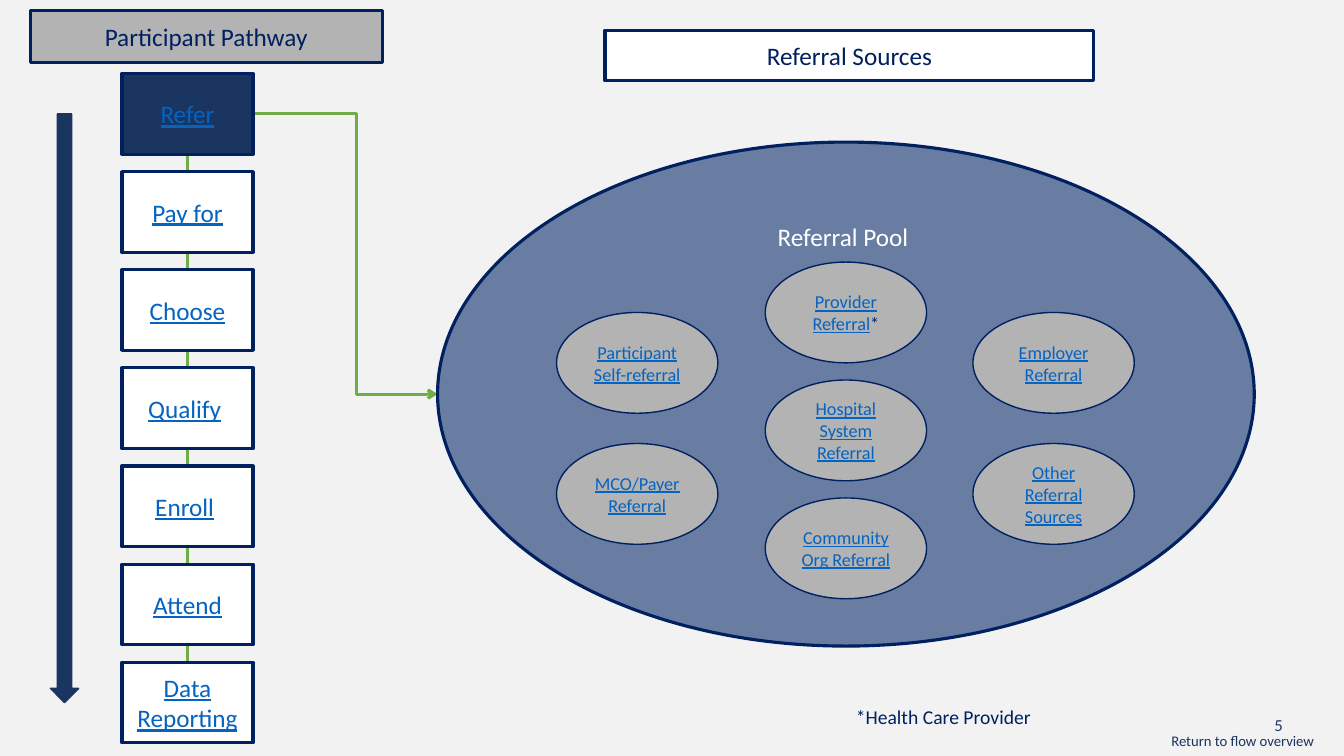
from lxml import etree
from pptx import Presentation
from pptx.dml.color import RGBColor
from pptx.enum.shapes import MSO_CONNECTOR, MSO_SHAPE
from pptx.enum.text import MSO_ANCHOR, MSO_AUTO_SIZE, PP_ALIGN
from pptx.oxml.ns import qn
from pptx.util import Inches, Pt

RECTANGLE = MSO_SHAPE.RECTANGLE
OVAL = MSO_SHAPE.OVAL
DOWN_ARROW = MSO_SHAPE.DOWN_ARROW
STRAIGHT = MSO_CONNECTOR.STRAIGHT
ELBOW = MSO_CONNECTOR.ELBOW
TOP = MSO_ANCHOR.TOP
MIDDLE = MSO_ANCHOR.MIDDLE
CENTER = PP_ALIGN.CENTER
LEFT = PP_ALIGN.LEFT
FIT_SHAPE = MSO_AUTO_SIZE.SHAPE_TO_FIT_TEXT

PAPER = RGBColor(0xF2, 0xF2, 0xF2)
WHITE = RGBColor(0xFF, 0xFF, 0xFF)
GRAY = RGBColor(0xB3, 0xB3, 0xB3)
NAVY = RGBColor(0x00, 0x20, 0x60)
DEEP_BLUE = RGBColor(0x19, 0x35, 0x60)
NUMBER_BLUE = RGBColor(0x20, 0x38, 0x64)
POOL_BLUE = RGBColor(0x68, 0x7D, 0xA1)
LINK_BLUE = RGBColor(0x05, 0x63, 0xC1)
GREEN = RGBColor(0x70, 0xAD, 0x47)

STEPS = ["Refer", "Pay for", "Choose", "Qualify ", "Enroll ", "Attend", "Data Reporting"]
STEP_LEFT, STEP_TOP, STEP_WIDTH, STEP_HEIGHT = 1.21, 0.73, 1.3, 0.8
STEP_PITCH = 5.84 / 6
STEP_CENTER = STEP_LEFT + STEP_WIDTH / 2

POOL_LEFT, POOL_TOP, POOL_WIDTH, POOL_HEIGHT = 4.34, 1.41, 8.1, 5
SOURCE_WIDTH, SOURCE_HEIGHT = 1.6, 1
SOURCE_COLUMNS = [
    (5.52, 3.1, 1.3, ["Participant Self-referral", "MCO/Payer Referral"]),
    (7.59, 2.6, 1.17, ["Provider Referral*", "Hospital System Referral", "Community Org Referral"]),
    (9.65, 3.1, 1.3, ["Employer Referral", "Other Referral Sources"]),
]


def write_text(frame, text, size=18, color=NAVY, link=False, align=CENTER, anchor=MIDDLE):
    frame.vertical_anchor = anchor
    paragraph = frame.paragraphs[0]
    paragraph.alignment = align
    linked = text.rstrip("* ") if link else ""
    for part, underlined in ((linked, True), (text[len(linked):], False)):
        if part:
            run = paragraph.add_run()
            run.text = part
            run.font.name = "Calibri"
            run.font.size = Pt(size)
            run.font.underline = underlined
            run.font.color.rgb = LINK_BLUE if underlined else color


def add_block(slide, kind, left, top, width, height, fill, border=NAVY, weight=2.25):
    block = slide.shapes.add_shape(kind, Inches(left), Inches(top), Inches(width), Inches(height))
    block.shadow.inherit = False
    block.fill.solid()
    block.fill.fore_color.rgb = fill
    block.line.color.rgb = border
    block.line.width = Pt(weight)
    block.text_frame.word_wrap = True
    return block


def add_label(slide, text, left, top, width, height, size, color):
    label = slide.shapes.add_textbox(Inches(left), Inches(top), Inches(width), Inches(height))
    label.text_frame.word_wrap = False
    label.text_frame.auto_size = FIT_SHAPE
    write_text(label.text_frame, text, size=size, color=color, align=LEFT, anchor=TOP)


def add_link(slide, kind, start_x, start_y, end_x, end_y):
    link = slide.shapes.add_connector(
        kind, Inches(start_x), Inches(start_y), Inches(end_x), Inches(end_y))
    link.line.color.rgb = GREEN
    link.line.width = Pt(2.25)
    etree.SubElement(link._element.spPr, qn("a:effectLst"))
    return link


def add_pool_arrow(slide):
    arrow = add_link(slide, ELBOW, STEP_LEFT + STEP_WIDTH, STEP_TOP + STEP_HEIGHT / 2,
                     POOL_LEFT, POOL_TOP + POOL_HEIGHT / 2)
    properties = arrow._element.spPr
    bend = etree.SubElement(properties.find(".//" + qn("a:avLst")), qn("a:gd"))
    bend.set("name", "adj1")
    bend.set("fmla", "val 56300")
    etree.SubElement(properties.find(qn("a:ln")), qn("a:tailEnd")).set("type", "arrow")


def add_pool(slide):
    pool = add_block(slide, OVAL, POOL_LEFT, POOL_TOP, POOL_WIDTH, POOL_HEIGHT, POOL_BLUE)
    write_text(pool.text_frame, "Referral Pool ", color=WHITE, anchor=TOP)
    for left, first_top, pitch, sources in SOURCE_COLUMNS:
        for row, source in enumerate(sources):
            oval = add_block(slide, OVAL, left, first_top + row * pitch,
                             SOURCE_WIDTH, SOURCE_HEIGHT, GRAY, weight=1)
            write_text(oval.text_frame, source, size=13, link=True)


def add_pathway(slide):
    add_block(slide, DOWN_ARROW, 0.5, 1.13, 0.28, 5.84, DEEP_BLUE, border=DEEP_BLUE, weight=1)
    add_link(slide, STRAIGHT, STEP_CENTER, STEP_TOP + STEP_HEIGHT,
             STEP_CENTER, STEP_TOP + 6 * STEP_PITCH)
    for index, step in enumerate(STEPS):
        box = add_block(slide, RECTANGLE, STEP_LEFT, STEP_TOP + index * STEP_PITCH,
                        STEP_WIDTH, STEP_HEIGHT, WHITE if index else DEEP_BLUE)
        write_text(box.text_frame, step, link=True)


def add_heading(slide, text, left, top, width, height, fill):
    heading = add_block(slide, RECTANGLE, left, top, width, height, fill)
    write_text(heading.text_frame, text)


def main():
    deck = Presentation()
    deck.slide_width = Inches(13.33)
    deck.slide_height = Inches(7.5)
    slide = deck.slides.add_slide(deck.slide_layouts[6])
    slide.background.fill.solid()
    slide.background.fill.fore_color.rgb = PAPER

    add_label(slide, "5", 12.54, 7.04, 0.28, 0.3, 12, NUMBER_BLUE)
    add_pool_arrow(slide)
    add_pool(slide)
    add_heading(slide, "Participant Pathway", 0.3, 0.1, 3.49, 0.52, GRAY)
    add_heading(slide, "Referral Sources", 6, 0.3, 4.85, 0.5, WHITE)
    add_pathway(slide)
    add_label(slide, "Return to flow overview", 11.52, 7.21, 1.64, 0.28, 10.5, DEEP_BLUE)
    add_label(slide, "*Health Care Provider", 8.39, 6.94, 1.96, 0.34, 14, NAVY)

    deck.save("out.pptx")


if __name__ == "__main__":
    main()
